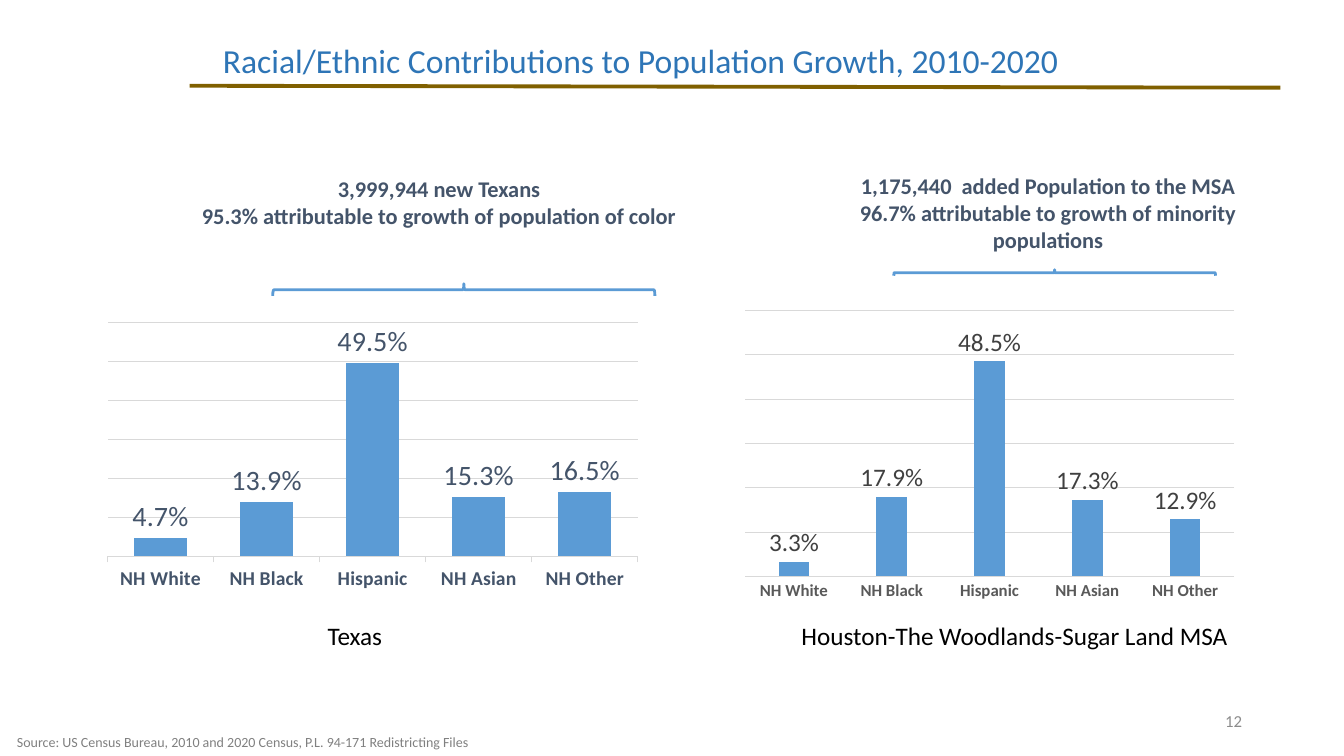
import dataclasses
import pptx
import pptx.chart.data
import pptx.dml.color
import pptx.enum.chart
import pptx.enum.shapes
import pptx.enum.text
import pptx.oxml
import pptx.oxml.ns
import pptx.util

RGBColor = pptx.dml.color.RGBColor
Align = pptx.enum.text.PP_ALIGN
Anchor = pptx.enum.text.MSO_ANCHOR
Tick = pptx.enum.chart.XL_TICK_MARK

BLUE = RGBColor(0x5B, 0x9B, 0xD5)
TITLE_BLUE = RGBColor(0x2E, 0x75, 0xB6)
SLATE = RGBColor(0x44, 0x54, 0x6A)
BROWN = RGBColor(0x80, 0x60, 0x00)
BLACK = RGBColor(0, 0, 0)
DARK_GRAY = RGBColor(0x40, 0x40, 0x40)
AXIS_GRAY = RGBColor(0x59, 0x59, 0x59)
SOURCE_GRAY = RGBColor(0x80, 0x80, 0x80)
NUMBER_GRAY = RGBColor(0x8C, 0x8C, 0x8C)
GRID_GRAY = RGBColor(0xD9, 0xD9, 0xD9)
FONT = "Calibri"
GROUPS = ["NH White", "NH Black", "Hispanic", "NH Asian", "NH Other"]


@dataclasses.dataclass
class Box:
    left: float
    top: float
    width: float
    height: float

    def inside(self, left, top, width, height):
        return Box(self.left + self.width * left / 100, self.top + self.height * top / 100,
                   self.width * width / 100, self.height * height / 100)

    def lengths(self):
        return [pptx.util.Inches(size) for size in dataclasses.astuple(self)]


SLIDE = Box(0, 0, 13.33, 7.5)


@dataclasses.dataclass
class ChartStyle:
    label_size: int
    label_color: RGBColor
    axis_size: int
    axis_color: RGBColor
    tick: Tick
    gap: int
    overlap: int
    plot: tuple


def style_font(font, size, color, bold=False):
    font.name = FONT
    font.size = pptx.util.Pt(size)
    font.bold = bold
    font.color.rgb = color


def add_text(page, box, lines, size, color, bold=False, align=Align.LEFT,
             anchor=Anchor.TOP, wrap=True, shape=None, spacing=1.0):
    if shape is None:
        shape = page.shapes.add_textbox(*box.lengths())
    else:
        shape.left, shape.top, shape.width, shape.height = box.lengths()
    frame = shape.text_frame
    frame.auto_size = pptx.enum.text.MSO_AUTO_SIZE.NONE
    frame.word_wrap = wrap
    frame.vertical_anchor = anchor
    for index, line in enumerate(lines):
        para = frame.add_paragraph() if index else frame.paragraphs[0]
        para.alignment = align
        para.line_spacing = spacing
        span = para.add_run()
        span.text = line
        style_font(span.font, size, color, bold)


def add_brace(page, box):
    upright = Box(box.left + (box.width - box.height) / 2,
                  box.top + (box.height - box.width) / 2, box.height, box.width)
    brace = page.shapes.add_shape(pptx.enum.shapes.MSO_SHAPE.LEFT_BRACE, *upright.lengths())
    brace.rotation = 90
    brace.shadow.inherit = False
    brace.fill.background()
    brace.line.color.rgb = BLUE
    brace.line.width = pptx.util.Pt(2)


def set_plot_area(chart, shares):
    fields = "".join(f'<c:{name} val="{share}"/>' for name, share in zip("xywh", shares))
    layout = pptx.oxml.parse_xml(
        f'<c:layout {pptx.oxml.ns.nsdecls("c")}><c:manualLayout>'
        '<c:layoutTarget val="inner"/><c:xMode val="edge"/><c:yMode val="edge"/>'
        f'{fields}</c:manualLayout></c:layout>')
    area = chart.element.chart.plotArea
    for old in area.findall(pptx.oxml.ns.qn("c:layout")):
        area.remove(old)
    area.insert(0, layout)


def add_growth_chart(page, box, values, style):
    data = pptx.chart.data.CategoryChartData(number_format="0.0%")
    data.categories = GROUPS
    data.add_series("Series 1", values)
    chart = page.shapes.add_chart(pptx.enum.chart.XL_CHART_TYPE.COLUMN_CLUSTERED,
                                  *box.lengths(), data).chart
    chart.has_legend = False
    chart.has_title = False
    style_font(chart.font, 10, BLACK)
    set_plot_area(chart, style.plot)

    plot = chart.plots[0]
    plot.vary_by_categories = False
    plot.gap_width = style.gap
    plot.overlap = style.overlap
    fill = plot.series[0].format.fill
    fill.solid()
    fill.fore_color.rgb = BLUE
    plot.has_data_labels = True
    labels = plot.data_labels
    labels.show_value = True
    labels.number_format = "0.0%"
    labels.number_format_is_linked = False
    labels.position = pptx.enum.chart.XL_LABEL_POSITION.OUTSIDE_END
    style_font(labels.font, style.label_size, style.label_color)

    groups = chart.category_axis
    groups.major_tick_mark = style.tick
    style_font(groups.tick_labels.font, style.axis_size, style.axis_color, True)
    shares = chart.value_axis
    shares.visible = False
    shares.minimum_scale = 0
    shares.maximum_scale = 0.6
    shares.major_unit = 0.1
    shares.has_major_gridlines = True
    for line in (groups.format.line, shares.major_gridlines.format.line):
        line.color.rgb = GRID_GRAY
        line.width = pptx.util.Pt(0.75)


def add_panel(page, box, heading, heading_area, brace_area, caption, caption_area,
              values, chart_area, style):
    add_growth_chart(page, box.inside(*chart_area), values, style)
    add_text(page, box.inside(*heading_area), heading, 16, SLATE, bold=True, align=Align.CENTER)
    add_brace(page, box.inside(*brace_area))
    add_text(page, box.inside(*caption_area), [caption], 18, BLACK)


def add_header(page, box):
    rule = page.shapes.add_connector(
        pptx.enum.shapes.MSO_CONNECTOR.STRAIGHT,
        *[pptx.util.Inches(place) for place in (
            box.left, box.top + box.height * 0.96, box.left + box.width, box.top + box.height)])
    rule.line.color.rgb = BROWN
    rule.line.width = pptx.util.Pt(2.75)
    rule.element.spPr.append(pptx.oxml.parse_xml(
        f'<a:effectLst {pptx.oxml.ns.nsdecls("a")}/>'))
    add_text(page, box.inside(2.13, 0, 79.11, 95.83),
             ["Racial/Ethnic Contributions to Population Growth, 2010-2020"],
             24, TITLE_BLUE, wrap=False, shape=page.shapes.title, spacing=0.9)


def add_footer(page, box):
    add_text(page, box.inside(70.67, 0, 22.5, 72.73), ["12"], 12, NUMBER_GRAY,
             align=Align.RIGHT, anchor=Anchor.MIDDLE)
    add_text(page, box.inside(0.53, 50.91, 35.78, 49.09),
             ["Source: US Census Bureau, 2010 and 2020 Census, P.L. 94-171 Redistricting Files"],
             10, SOURCE_GRAY, wrap=False)


def main():
    deck = pptx.Presentation()
    deck.slide_width, deck.slide_height = SLIDE.lengths()[2:]
    page = deck.slides.add_slide(deck.slide_layouts[5])
    add_header(page, Box(1.88, 0.39, 10.82, 0.48))
    add_panel(
        page, Box(0.72, 1.66, 6.4, 5.15),
        ["3,999,944 new Texans", "95.3% attributable to growth of population of color"],
        (17.19, 0.58, 79.22, 12.43), (31.02, 22.43, 59.22, 2.33),
        "Texas", (37.97, 86.21, 61.72, 13.79),
        [0.047, 0.139, 0.495, 0.153, 0.165], (0, 28.74, 90.31, 54.37),
        ChartStyle(20, SLATE, 14, SLATE, Tick.OUTSIDE, 100, 0, (0.06, 0.02, 0.91, 0.83)))
    add_panel(
        page, Box(7.29, 1.66, 5.5, 5.15),
        ["1,175,440  added Population to the MSA",
         "96.7% attributable to growth of minority populations"],
        (12.91, 0, 87.09, 18.25), (28.64, 19.71, 58, 1.17),
        "Houston-The Woodlands-Sugar Land MSA", (10.18, 86.21, 80.73, 13.79),
        [0.033, 0.179, 0.485, 0.173, 0.129], (0, 26.41, 90.91, 58.25),
        ChartStyle(18, DARK_GRAY, 12, AXIS_GRAY, Tick.NONE, 219, -27, (0.02, 0.02, 0.97, 0.88)))
    add_footer(page, Box(0, 6.95, SLIDE.width, 0.55))
    deck.save("out.pptx")


if __name__ == "__main__":
    main()
